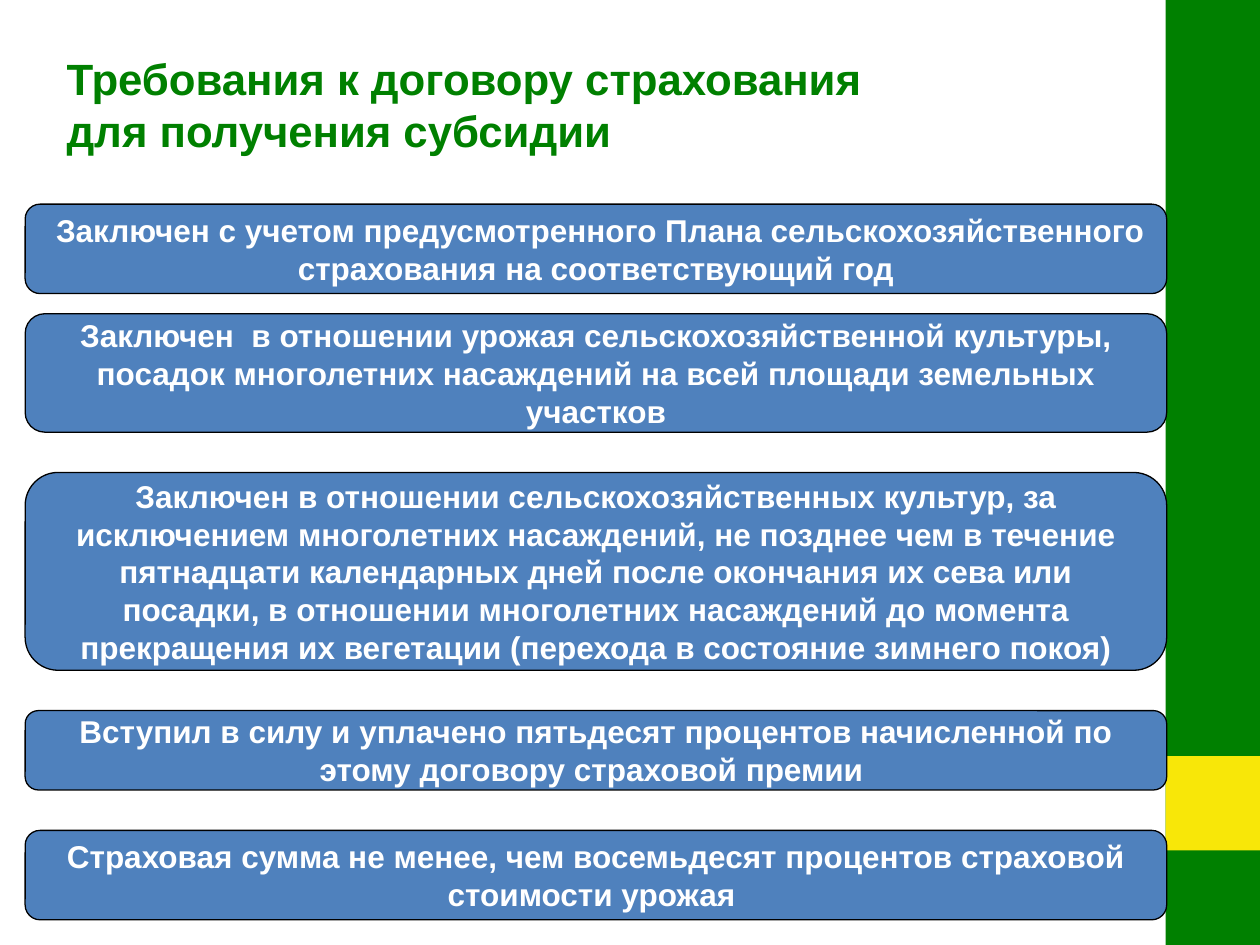
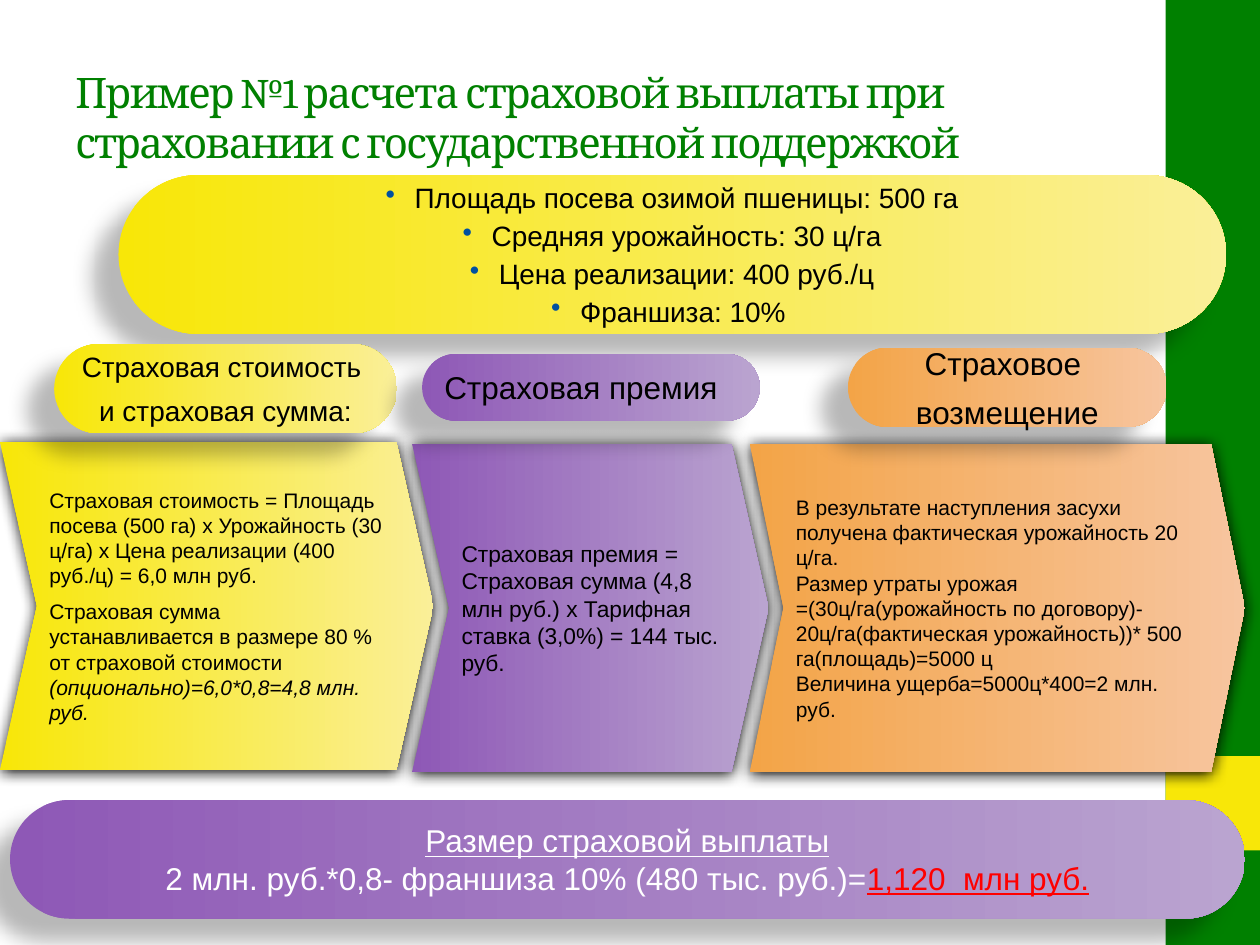
"""Build two slides on crop insurance rules and a sample payout."""
import pptx
import pptx.dml.color
import pptx.enum.dml
import pptx.enum.shapes
import pptx.enum.text
import pptx.oxml.ns
import pptx.util
from lxml import etree

RGB = pptx.dml.color.RGBColor
GREEN = RGB(0x00, 0x80, 0x00)
YELLOW = RGB(0xF8, 0xE7, 0x08)
BLUE = RGB(0x4F, 0x81, 0xBD)
NAVY = RGB(0x00, 0x50, 0xA0)
BLACK = RGB(0x00, 0x00, 0x00)
WHITE = RGB(0xFF, 0xFF, 0xFF)
RED = RGB(0xFF, 0x00, 0x00)
GOLD = (YELLOW, RGB(0xFA, 0xEF, 0x98))
PLUM = (RGB(0x8E, 0x58, 0xB6), RGB(0xBA, 0xA4, 0xD0))
PEACH = (RGB(0xF3, 0xA4, 0x47), RGB(0xF7, 0xC5, 0x9F))

SOFT = (28, 11.8, 19.7, 141)
HARD = (100, 8.5, 1, 90)

COLS, ROWS = 100, 75
FORM = pptx.enum.shapes.MSO_SHAPE
MID = pptx.enum.text.MSO_ANCHOR.MIDDLE
LEFT = pptx.enum.text.PP_ALIGN.LEFT
MIDDLE = pptx.enum.text.PP_ALIGN.CENTER
qn = pptx.oxml.ns.qn
Pt = pptx.util.Pt


def add_node(owner, tag, **attrs):
    node = etree.SubElement(owner, qn(tag))
    for name, value in attrs.items():
        node.set(name, str(value))
    return node


def write(frame, *lines, size=18, font="Arial", color=BLACK, bold=False,
          align=LEFT, before=0, mark=None, track=0, wrap=True):
    frame.word_wrap = wrap
    gaps = before if isinstance(before, tuple) else (before,) * len(lines)
    for num, (line, gap) in enumerate(zip(lines, gaps)):
        para = frame.add_paragraph() if num else frame.paragraphs[0]
        para.alignment = align
        para.space_before = Pt(gap)
        if mark:
            props = para._p.get_or_add_pPr()
            hang = pptx.util.Inches(0.23)
            props.set("marL", str(hang))
            props.set("indent", str(-hang))
            add_node(add_node(props, "a:buClr"), "a:srgbClr", val=mark)
            add_node(props, "a:buChar", char="•")
        for part in [line] if isinstance(line, str) else line:
            text, style = (part, {}) if isinstance(part, str) else part
            run = para.add_run()
            run.text = text
            face = run.font
            face.name, face.size, face.bold = font, Pt(size), bold
            face.color.rgb = style.get("color", color)
            face.italic = style.get("italic", False)
            face.underline = style.get("under", False)
            if track:
                run._r.get_or_add_rPr().set("spc", str(track))


class Deck:
    def __init__(self):
        self.file = pptx.Presentation()
        self.file.slide_width = pptx.util.Inches(10)
        self.file.slide_height = pptx.util.Inches(7.5)
        self.slide = None

    def place(self, left, top, width, height):
        col = self.file.slide_width / COLS
        row = self.file.slide_height / ROWS
        return [round(n) for n in (left * col, top * row, width * col, height * row)]

    def start(self):
        self.slide = self.file.slides.add_slide(self.file.slide_layouts[6])
        self.shape(FORM.RECTANGLE, (92.5, 0, 7.5, 75), GREEN)
        self.shape(FORM.RECTANGLE, (92.5, 60, 7.5, 7.5), YELLOW)

    def shape(self, form, spot, fill, edge=None, bend=None, shade=None):
        item = self.slide.shapes.add_shape(form, *self.place(*spot))
        if bend is not None:
            item.adjustments[0] = bend
        if isinstance(fill, tuple) and not isinstance(fill, RGB):
            item.fill.gradient()
            item.fill.gradient_angle = 0
            for stop, tone in zip(item.fill.gradient_stops, fill):
                stop.color.rgb = tone
        else:
            item.fill.solid()
            item.fill.fore_color.rgb = fill
        if edge is None:
            item.line.fill.background()
        else:
            item.line.color.rgb = edge
            item.line.width = Pt(0.75)
        item.shadow.inherit = False
        if shade:
            self.shade(item, *shade)
        item.text_frame.vertical_anchor = MID
        return item.text_frame

    def shade(self, item, alpha, blur, dist, angle):
        glow = add_node(item._element.spPr.find(qn("a:effectLst")), "a:outerShdw",
                        blurRad=Pt(blur), dist=Pt(dist), dir=angle * 60000,
                        algn="ctr", rotWithShape=0)
        tone = add_node(glow, "a:srgbClr", val=BLACK)
        add_node(tone, "a:alpha", val=alpha * 1000)

    def title(self, spot, *lines, anchor=None, **style):
        frame = self.slide.shapes.add_textbox(*self.place(*spot)).text_frame
        frame.vertical_anchor = anchor
        write(frame, *lines, color=GREEN, **style)

    def card(self, spot, text):
        frame = self.shape(FORM.FLOWCHART_ALTERNATE_PROCESS, spot, BLUE, edge=BLACK)
        write(frame, text, color=WHITE, bold=True, align=MIDDLE)

    def pill(self, spot, fill, *lines, align=MIDDLE, **style):
        frame = self.shape(FORM.ROUNDED_RECTANGLE, spot, fill, bend=0.5, shade=SOFT)
        write(frame, *lines, align=align, wrap=False, **style)

    def arrow(self, spot, fill, bend, *lines, **style):
        frame = self.shape(FORM.CHEVRON, spot, fill, bend=bend, shade=HARD)
        write(frame, *lines, **style)


def build_rules(deck):
    deck.start()
    rules = [
        (7.1, 1.6, " Заключен с учетом предусмотренного Плана сельскохозяйственного "
                   "страхования на соответствующий год"),
        (9.4, 3.2, "Заключен  в отношении урожая сельскохозяйственной культуры, "
                   "посадок многолетних насаждений на всей площади земельных участков"),
        (15.7, 3.2, "Заключен в отношении сельскохозяйственных культур, за исключением "
                    "многолетних насаждений, не позднее чем в течение пятнадцати "
                    "календарных дней после окончания их сева или посадки, в отношении "
                    "многолетних насаждений до момента прекращения их вегетации "
                    "(перехода в состояние зимнего покоя)"),
        (6.3, 3.2, "Вступил в силу и уплачено пятьдесят процентов начисленной по "
                   "этому договору страховой премии "),
        (7.1, 0, "Страховая сумма не менее, чем восемьдесят процентов страховой "
                 "стоимости урожая "),
    ]
    top = 16.2
    for height, gap, text in rules:
        deck.card((2, top, 90.6, height), text)
        top += height + gap
    deck.title((4.3, 3.6, 66.6, 9.3), "Требования к договору страхования",
               "для получения субсидии", size=25, bold=True, wrap=False)


def build_sample(deck):
    deck.start()
    deck.pill((9.4, 13.9, 87.9, 12.6), GOLD,
              "Площадь посева озимой пшеницы: 500 га",
              "Средняя урожайность: 30 ц/га",
              "Цена реализации: 400 руб./ц",
              "Франшиза: 10% ", size=16, before=2.5, mark=NAVY)
    deck.title((5, 3, 83.3, 12.5),
               "Пример №1 расчета страховой выплаты при "
               "страховании с государственной поддержкой",
               anchor=MID, size=24, font="Cambria", track=-100)
    deck.arrow((59.5, 35.2, 39.3, 26.1), PEACH, 0.103,
               "В результате наступления засухи получена фактическая "
               "урожайность 20 ц/га.",
               "Размер утраты урожая =(30ц/га(урожайность по договору)- "
               "20ц/га(фактическая урожайность))* 500 га(площадь)=5000 ц",
               "Величина ущерба=5000ц*400=2 млн. руб.",
               size=12, before=(2.5, 0, 0))
    deck.arrow((32.7, 35.2, 28.3, 26.1), PLUM, 0.113,
               "Страховая премия = Страховая сумма (4,8 млн руб.) х "
               "Тарифная ставка (3,0%) = 144 тыс. руб.", size=13, before=6)
    deck.arrow((0, 35.1, 34.4, 26), GOLD, 0.113,
               "Страховая стоимость = Площадь посева (500 га) х Урожайность "
               "(30 ц/га) х Цена реализации (400 руб./ц) = 6,0 млн руб.",
               ["Страховая сумма устанавливается в размере 80 % от страховой стоимости ",
                ("(опционально)=6,0*0,8=4,8 млн. руб.", {"italic": True})],
               size=12, before=(2.5, 6))
    deck.pill((4.3, 27.3, 27.2, 7.1), GOLD, "Страховая стоимость ",
              "и страховая сумма:", size=16, before=6)
    deck.pill((33.5, 28.1, 26.8, 5.3), PLUM, "Страховая премия",
              align=LEFT, before=6)
    deck.pill((67.3, 27.6, 25.3, 6.3), PEACH, "Страховое ", "возмещение", before=6)
    deck.pill((0.8, 63.5, 98, 9.4), PLUM,
              [("Размер страховой выплаты", {"under": True})],
              ["2 млн. руб.*0,8- франшиза 10% (480 тыс. руб.)=",
               ("1,120  млн руб.", {"color": RED, "under": True})], color=WHITE)


def main():
    deck = Deck()
    build_rules(deck)
    build_sample(deck)
    deck.file.save("out.pptx")


if __name__ == "__main__":
    main()
